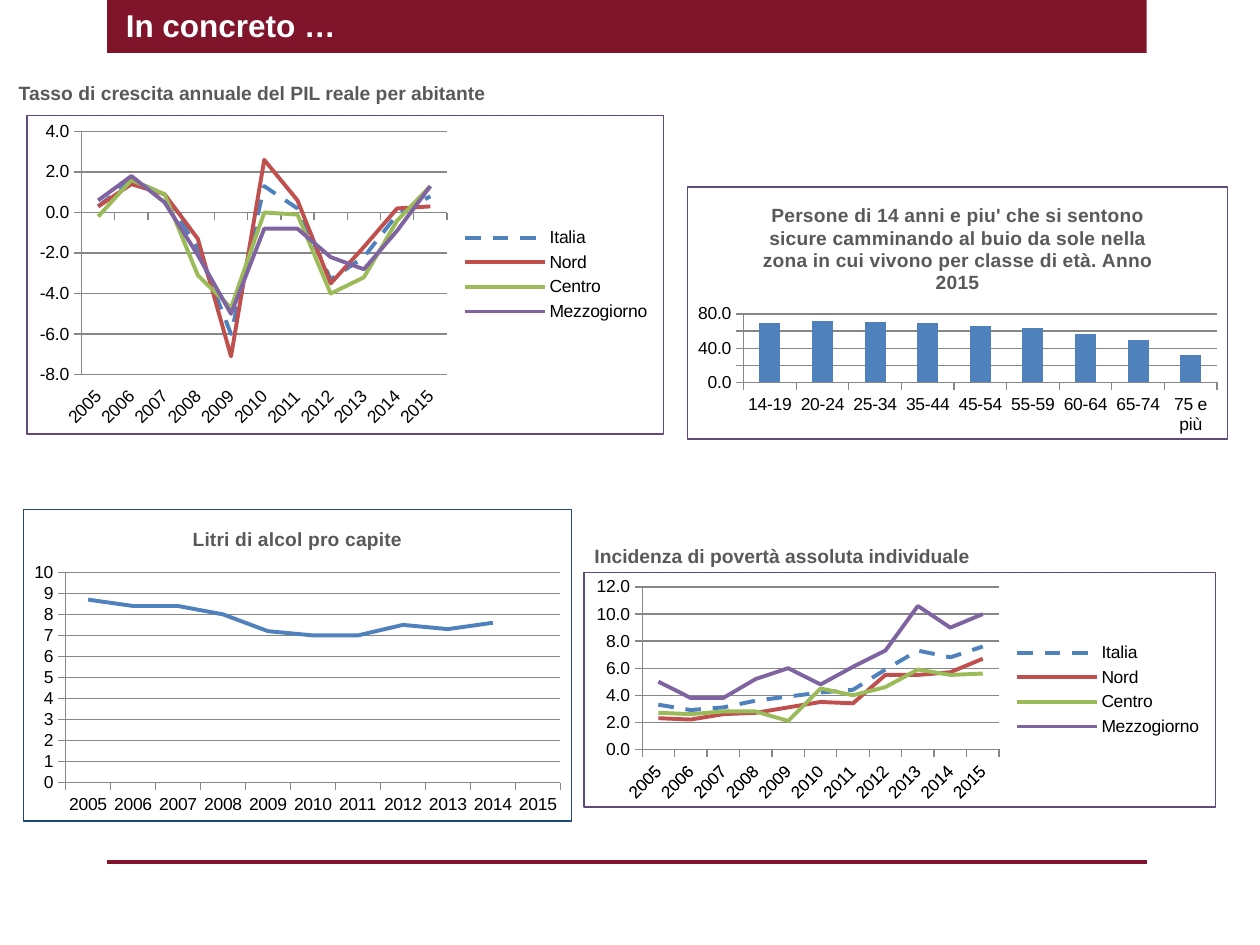
from dataclasses import dataclass

from lxml import etree
from pptx import Presentation, util as u
from pptx.chart.data import CategoryChartData
from pptx.dml.color import RGBColor
from pptx.enum import chart as ch, dml, shapes, text
from pptx.oxml import parse_xml
from pptx.oxml.ns import nsdecls, qn


@dataclass(frozen=True)
class Theme:
    """Colours, type sizes and line widths of the slide."""
    font: str = "Arial"
    band: str = "7F142A"
    paper: str = "FFFFFF"
    ink: str = "000000"
    caption: str = "595959"
    axis: str = "868686"
    frame: str = "604A7B"
    alcohol_frame: str = "1F497D"
    series: tuple = ("4F81BD", "C0504D", "9BBB59", "8064A2")
    title_size: int = 18
    caption_size: int = 11
    chart_size: int = 10
    hairline: float = 0.75
    curve: float = 2.25
    rule: int = 2


THEME = Theme()
SLIDE = (u.Inches(10), u.Inches(7.5))
YEARS = [str(year) for year in range(2005, 2016)]
AGES = ["14-19", "20-24", "25-34", "35-44", "45-54", "55-59", "60-64", "65-74", "75 e più"]
GROWTH = {
    "Italia": [0.3, 1.6, 0.9, -1.8, -6, 1.3, 0.2, -3.3, -2.2, -0.1, 0.8],
    "Nord": [0.3, 1.4, 0.9, -1.3, -7.1, 2.6, 0.6, -3.5, -1.7, 0.2, 0.3],
    "Centro": [-0.2, 1.6, 0.9, -3.1, -4.7, 0, -0.1, -4, -3.2, -0.4, 1.3],
    "Mezzogiorno": [0.6, 1.8, 0.5, -2.1, -5, -0.8, -0.8, -2.2, -2.8, -0.9, 1.3],
}
POVERTY = {
    "Italia": [3.3, 2.9, 3.1, 3.6, 3.9, 4.2, 4.4, 5.9, 7.3, 6.8, 7.6],
    "Nord": [2.3, 2.2, 2.6, 2.7, 3.1, 3.5, 3.4, 5.5, 5.5, 5.7, 6.7],
    "Centro": [2.7, 2.6, 2.8, 2.8, 2.1, 4.5, 4, 4.6, 5.9, 5.5, 5.6],
    "Mezzogiorno": [5, 3.8, 3.8, 5.2, 6, 4.8, 6.1, 7.3, 10.6, 9, 10],
}
SAFETY = {"Series 1": [69, 72, 71, 69, 66, 64, 56, 50, 32]}
ALCOHOL = {"Series 1": [8.7, 8.4, 8.4, 8, 7.2, 7, 7, 7.5, 7.3, 7.6, None]}


def area(*shares):
    """Turn percentages of the slide's width and height into lengths."""
    return [int(SLIDE[i % 2] * share / 100) for i, share in enumerate(shares)]


def apply(target, values):
    """Set every attribute in a dict of format values."""
    for name, value in values.items():
        setattr(target, name, value)


def style_font(font, size, color, bold=False):
    """Set typeface, size, colour and weight."""
    apply(font, {"name": THEME.font, "size": u.Pt(size), "bold": bold})
    font.color.rgb = RGBColor.from_string(color)


def style_line(line, color, width):
    """Set the colour and width of a line."""
    line.color.rgb = RGBColor.from_string(color)
    line.width = u.Pt(width)


def add_block(page, shares, color):
    """Add a plain filled rectangle."""
    block = page.shapes.add_shape(shapes.MSO_SHAPE.RECTANGLE, *area(*shares))
    block.shadow.inherit = False
    block.fill.solid()
    block.fill.fore_color.rgb = RGBColor.from_string(color)
    block.line.fill.background()
    return block


def add_rule(page, shares):
    """Add the straight line at the foot of the slide."""
    rule = page.shapes.add_connector(shapes.MSO_CONNECTOR.STRAIGHT, *area(*shares))
    style_line(rule.line, THEME.band, THEME.rule)
    etree.SubElement(rule._element.spPr, qn("a:effectLst"))


def write(box, words, size, color, anchor=text.MSO_ANCHOR.TOP):
    """Write one bold left-aligned line into a box."""
    apply(box.text_frame, {"word_wrap": True, "vertical_anchor": anchor})
    para = box.text_frame.paragraphs[0]
    para.alignment = text.PP_ALIGN.LEFT
    span = para.add_run()
    span.text = words
    style_font(span.font, size, color, True)


def frame_chart(chart, color):
    """Give the chart a white ground and a thin border."""
    frame = parse_xml(
        f'<c:spPr {nsdecls("c", "a")}>'
        f'<a:solidFill><a:srgbClr val="{THEME.paper}"/></a:solidFill>'
        f'<a:ln w="{u.Pt(THEME.hairline)}"><a:solidFill><a:srgbClr val="{color}"/>'
        '</a:solidFill></a:ln></c:spPr>')
    chart._chartSpace.find(qn("c:chart")).addnext(frame)


def style_axes(chart, scale, number_format, slanted):
    """Format both axes, the gridlines and the tick labels."""
    for axis in (chart.category_axis, chart.value_axis):
        apply(axis, {"major_tick_mark": ch.XL_TICK_MARK.OUTSIDE,
                     "minor_tick_mark": ch.XL_TICK_MARK.NONE})
        style_line(axis.format.line, THEME.axis, THEME.hairline)
        style_font(axis.tick_labels.font, THEME.chart_size, THEME.ink)
    names, values = chart.category_axis, chart.value_axis
    names.has_major_gridlines = False
    if slanted:
        names.tick_label_position = ch.XL_TICK_LABEL_POSITION.LOW
        names._element.find(qn("c:txPr")).find(qn("a:bodyPr")).set("rot", "-2700000")
    apply(values, dict(zip(("minimum_scale", "maximum_scale", "major_unit"), scale)))
    values.has_major_gridlines = True
    style_line(values.major_gridlines.format.line, THEME.axis, THEME.hairline)
    apply(values.tick_labels, {"number_format": number_format,
                               "number_format_is_linked": False})


def style_series(plot, is_line):
    """Colour the series, with a dashed national line where areas are compared."""
    plot.vary_by_categories = False
    for series, color in zip(plot.series, THEME.series):
        if not is_line:
            series.format.fill.solid()
            series.format.fill.fore_color.rgb = RGBColor.from_string(color)
            continue
        series.smooth = False
        series.marker.style = ch.XL_MARKER_STYLE.NONE
        style_line(series.format.line, color, THEME.curve)
        if series.name == "Italia":
            series.format.line.dash_style = dml.MSO_LINE.DASH


def add_data_chart(page, shares, labels, table, scale, title=None, is_line=True,
                   number_format="0.0", frame=THEME.frame):
    """Add a line or column chart, with a legend when it compares areas."""
    data = CategoryChartData()
    data.categories = labels
    for name, values in table.items():
        data.add_series(name, values)
    kind = ch.XL_CHART_TYPE.LINE if is_line else ch.XL_CHART_TYPE.COLUMN_CLUSTERED
    chart = page.shapes.add_chart(kind, *area(*shares), data).chart
    style_font(chart.font, THEME.chart_size, THEME.ink)
    compares = len(table) > 1
    apply(chart, {"has_title": bool(title), "has_legend": compares})
    if title:
        span = chart.chart_title.text_frame.paragraphs[0].add_run()
        span.text = title
        style_font(span.font, THEME.caption_size, THEME.caption, True)
        chart.chart_title.include_in_layout = False
    if compares:
        apply(chart.legend, {"position": ch.XL_LEGEND_POSITION.RIGHT,
                             "include_in_layout": False})
    if not is_line:
        chart.plots[0].gap_width = 150
    style_series(chart.plots[0], is_line)
    style_axes(chart, scale, number_format, compares)
    frame_chart(chart, frame)


def main():
    """Build the slide and save it."""
    deck = Presentation()
    deck.slide_width, deck.slide_height = SLIDE
    page = deck.slides.add_slide(deck.slide_layouts[6])

    add_block(page, (8.5, 0, 82.5, 5.6), THEME.band)
    add_rule(page, (8.5, 91.2, 91, 91.2))
    heading = page.shapes.add_textbox(*area(9, 0, 82.1, 5.33))
    write(heading, "In concreto …", THEME.title_size, THEME.paper)

    add_data_chart(page, (46.3, 60.53, 50.2, 24.93), YEARS, POVERTY, (0, 12, 2))
    poverty = page.shapes.add_textbox(*area(46.2, 56.93, 50.3, 3.87))
    write(poverty, "Incidenza di povertà assoluta individuale",
          THEME.caption_size, THEME.caption)

    add_data_chart(page, (2.1, 12.13, 50.6, 33.87), YEARS, GROWTH, (-8, 4, 2))
    growth = add_block(page, (0.5, 8.27, 56.1, 3.2), THEME.paper)
    write(growth, "Tasso di crescita annuale del PIL reale per abitante",
          THEME.caption_size, THEME.caption, text.MSO_ANCHOR.MIDDLE)

    add_data_chart(page, (54.5, 19.73, 43, 26.8), AGES, SAFETY, (0, 80, 20),
                   "Persone di 14 anni e piu' che si sentono sicure camminando al buio "
                   "da sole nella zona in cui vivono per classe di età. Anno 2015",
                   is_line=False)
    add_data_chart(page, (1.8, 53.87, 43.6, 33.07), YEARS, ALCOHOL, (0, 10, 1),
                   "Litri di alcol pro capite", number_format="0",
                   frame=THEME.alcohol_frame)
    deck.save("out.pptx")


if __name__ == "__main__":
    main()
